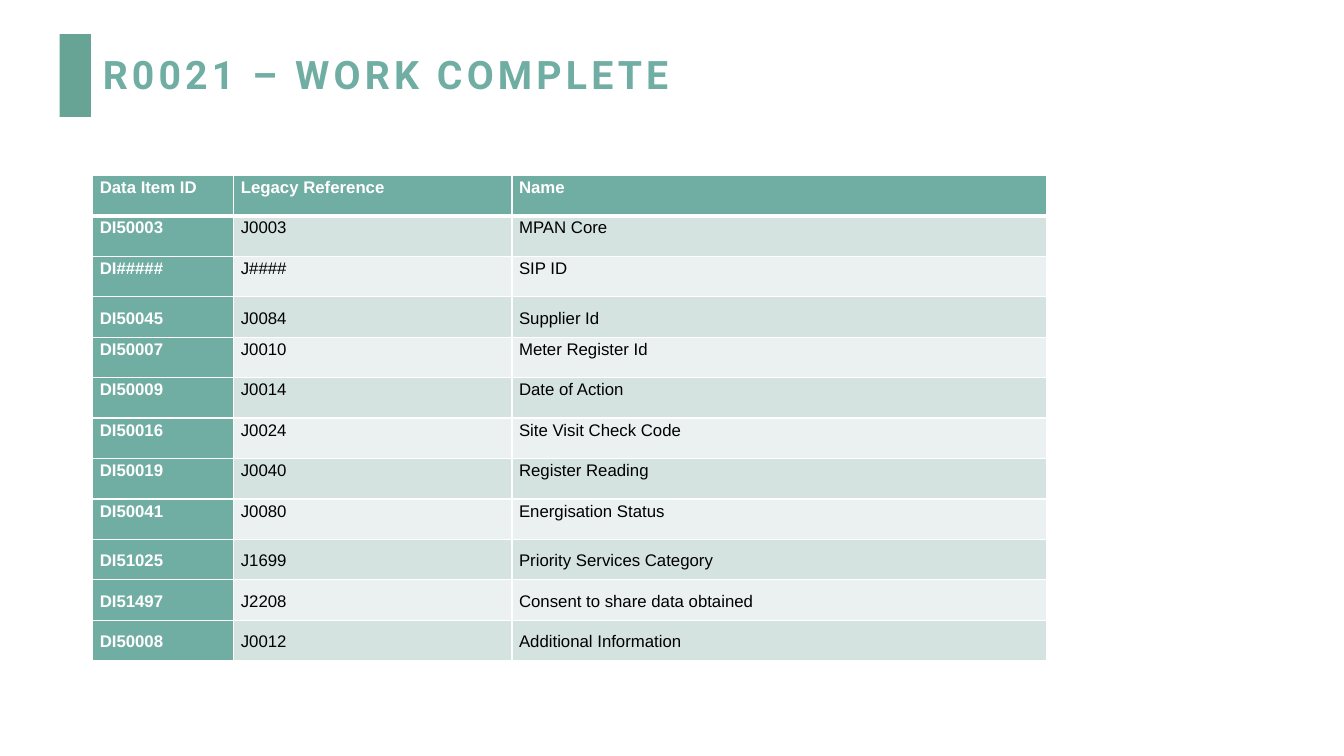
"""Builds the R0021 work complete slide with its table of data items."""
from lxml import etree
from pptx import Presentation
from pptx.dml.color import RGBColor
from pptx.enum.shapes import MSO_SHAPE
from pptx.enum.text import MSO_ANCHOR, PP_ALIGN
from pptx.oxml.ns import qn
from pptx.util import Inches, Pt

RECTANGLE = MSO_SHAPE.RECTANGLE
TOP, MIDDLE = MSO_ANCHOR.TOP, MSO_ANCHOR.MIDDLE
LEFT = PP_ALIGN.LEFT
TITLE_ONLY = 5
GRID = 100

COLORS = {
    "accent": "68A495",
    "teal": "70ADA3",
    "band_dark": "D5E3E0",
    "band_light": "EBF1F0",
    "white": "FFFFFF",
    "black": "000000",
}

HEADINGS = ("Data Item ID", "Legacy Reference", "Name")
DATA_ITEMS = [
    ("DI50003", "J0003", "MPAN Core"),
    ("DI#####", "J####", "SIP ID"),
    ("DI50045", "J0084", "Supplier Id"),
    ("DI50007", "J0010", "Meter Register Id"),
    ("DI50009", "J0014", "Date of Action"),
    ("DI50016", "J0024", "Site Visit Check Code"),
    ("DI50019", "J0040", "Register Reading"),
    ("DI50041", "J0080", "Energisation Status"),
    ("DI51025", "J1699", "Priority Services Category"),
    ("DI51497", "J2208", "Consent to share data obtained"),
    ("DI50008", "J0012", "Additional Information"),
]
CENTRED_ITEMS = {"DI50045", "DI51025", "DI51497", "DI50008"}


def rgb(color):
    return RGBColor.from_string(COLORS[color])


def write(frame, text, *, font="Arial", size=12, color="black", bold=False,
          line=1.15, after=0, tracking=None):
    paragraph = frame.paragraphs[0]
    paragraph.alignment = LEFT
    paragraph.line_spacing = line
    paragraph.space_before = Pt(0)
    paragraph.space_after = Pt(after)
    run = paragraph.add_run()
    run.text = text
    run.font.name = font
    run.font.size = Pt(size)
    run.font.bold = bold
    run.font.color.rgb = rgb(color)
    if tracking:
        run.font._element.set("spc", str(tracking * 100))


def add_borders(cell, **widths):
    properties = cell._tc.get_or_add_tcPr()
    for side in "LRTB":
        width = Pt(widths.get(side, 1))
        border = etree.SubElement(properties, qn(f"a:ln{side}"), w=str(width))
        fill = etree.SubElement(border, qn("a:solidFill"))
        etree.SubElement(fill, qn("a:srgbClr"), val=COLORS["white"])


class SlideBuilder:
    def __init__(self, deck):
        self.column = deck.slide_width / GRID
        self.row = deck.slide_height / GRID
        self.slide = deck.slides.add_slide(deck.slide_layouts[TITLE_ONLY])

    def box(self, left, top, width, height):
        return (round(left * self.column), round(top * self.row),
                round(width * self.column), round(height * self.row))

    def bar(self, *area, color):
        bar = self.slide.shapes.add_shape(RECTANGLE, *self.box(*area))
        bar.shadow.inherit = False
        bar.fill.solid()
        bar.fill.fore_color.rgb = rgb(color)
        bar.line.fill.background()

    def title(self, text, *area):
        title = self.slide.shapes.title
        title.left, title.top, title.width, title.height = self.box(*area)
        title.text_frame.vertical_anchor = MIDDLE
        title.text_frame.word_wrap = True
        write(title.text_frame, text, font="Roboto", size=28, color="teal",
              bold=True, line=0.9, tracking=3)

    def table(self, rows, left, top, column_widths, row_height):
        area = self.box(left, top, sum(column_widths), row_height * len(rows))
        table = self.slide.shapes.add_table(
            len(rows), len(column_widths), *area).table
        for column, width in zip(table.columns, column_widths):
            column.width = round(width * self.column)
        for row_index, texts in enumerate(rows):
            table.rows[row_index].height = round(row_height * self.row)
            for column_index, text in enumerate(texts):
                self.cell(table.cell(row_index, column_index), text,
                          row_index, column_index, texts[0] in CENTRED_ITEMS)

    def cell(self, cell, text, row_index, column_index, centred):
        heading = row_index == 0 or column_index == 0
        band = "band_dark" if row_index % 2 else "band_light"
        cell.margin_left = cell.margin_right = Inches(0.07)
        cell.margin_top = cell.margin_bottom = 0
        cell.vertical_anchor = MIDDLE if centred else TOP
        add_borders(cell, T=3 if row_index == 1 else 1,
                    B=3 if row_index == 0 else 1)
        cell.fill.solid()
        cell.fill.fore_color.rgb = rgb("teal" if heading else band)
        write(cell.text_frame, text, bold=heading, after=10,
              color="white" if heading else "black")


def main():
    deck = Presentation()
    deck.slide_width, deck.slide_height = Inches(13.33), Inches(7.5)
    builder = SlideBuilder(deck)
    builder.bar(4.43, 4.53, 2.33, 10.93, color="accent")
    builder.title("R0021 – WORK COMPLETE", 6.9, 5.33, 83.05, 9.6)
    builder.table([HEADINGS, *DATA_ITEMS], 6.9, 23.2,
                  column_widths=(10.5, 20.7, 39.76), row_height=5.35)
    deck.save("out.pptx")


if __name__ == "__main__":
    main()
